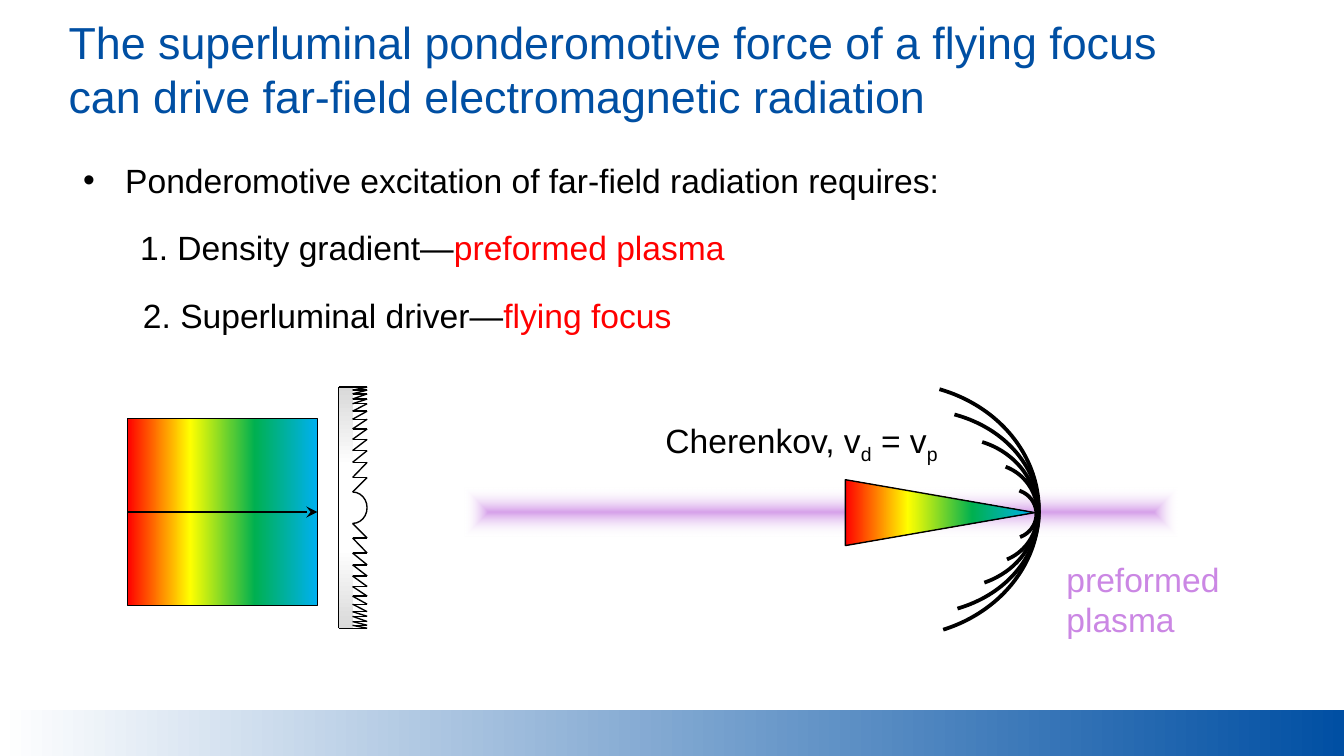
import pptx
import pptx.dml.color
import pptx.enum.shapes
import pptx.enum.text
import pptx.oxml
import pptx.oxml.ns
import pptx.util
from dataclasses import dataclass

Pt = pptx.util.Pt
SHAPE = pptx.enum.shapes.MSO_SHAPE
ANCHOR = pptx.enum.text.MSO_ANCHOR
NAMESPACE = pptx.oxml.ns.nsdecls("a")


@dataclass(frozen=True)
class Theme:
    font: str = "Arial"
    title_size: float = 24
    text_size: float = 18
    thin: float = 0.75
    thick: float = 2
    blue: str = "004FA3"
    black: str = "000000"
    white: str = "FFFFFF"
    gray: str = "D9D9D9"
    red: str = "FF0000"
    plasma: str = "CB87E4"


THEME = Theme()

# Text: each paragraph is a list of (text, color, baseline) runs; "\v" breaks a line
TITLE = [[("The superluminal ponderomotive force of a flying focus \v"
           "can drive far-field electromagnetic radiation", THEME.blue, 0)]]
REQUIREMENTS = [
    [("Ponderomotive excitation of far-field radiation requires:", THEME.black, 0)],
    [("1. Density gradient—", THEME.black, 0), ("preformed plasma", THEME.red, 0)],
    [("2. Superluminal driver—", THEME.black, 0), ("flying focus", THEME.red, 0)],
]
REQUIREMENT_FORMATS = [
    dict(bullet="•", margin=22.5, indent=-22.5),
    dict(margin=30.5, space_before=14.3),
    dict(margin=32, space_before=15),
]
CHERENKOV = [[("Cherenkov, v", THEME.black, 0), ("d", THEME.black, -25),
              (" = v", THEME.black, 0), ("p", THEME.black, -25)]]
PLASMA_LABEL = [[("preformed", THEME.plasma, 0)], [("plasma", THEME.plasma, 0)]]

# Gradient stops: (position in percent, color, opacity in percent)
RAINBOW = [(0, THEME.red, 100), (33, "FFFF00", 100), (67, "00B050", 100), (100, "00B0F0", 100)]
BAND = [(0, THEME.white, 100), (100, THEME.blue, 100)]
GLASS = [(0, THEME.gray, 100), (33, THEME.white, 100), (67, THEME.white, 100), (100, THEME.gray, 100)]
GLOW = [(0, THEME.plasma, 78), (100, THEME.white, 0)]

# Lens: tooth heights of the upper half; the lower half mirrors them
LENS_LEFT, TOOTH_LEFT, LENS_RIGHT = 181.4, 188.9, 196.7
TEETH = [207.4, 209, 211, 213.8, 216.3, 220.3, 224.6, 229.8, 235.4, 241.4, 247.7, 255.8, 263.6]
LENS_MIRROR = 544

# Wavefronts: left, top, width, height; angles in the preset's own units
WAVEFRONTS = [(527.8, 262.1, 27.4, 26.6), (503.3, 248.4, 52.6, 53.3), (468.7, 234.7, 87.1, 79.9),
              (427.7, 219.6, 128.9, 109.4), (402.5, 205.2, 154.1, 136.1)]
WAVEFRONT_ANGLES = (174.116, 40.848)
HALF_CIRCLE = (162, 53.994)


def rgb(color):
    return pptx.dml.color.RGBColor.from_string(color)


def write(shape, paragraphs, size=THEME.text_size, anchor=ANCHOR.TOP, left_inset=7.2, formats=None):
    frame = shape.text_frame
    frame.word_wrap = True
    frame.auto_size = pptx.enum.text.MSO_AUTO_SIZE.NONE
    frame.vertical_anchor = anchor
    frame.margin_left, frame.margin_right = Pt(left_inset), Pt(7.2)
    frame.margin_top = frame.margin_bottom = Pt(3.6)
    for index, runs in enumerate(paragraphs):
        paragraph = frame.paragraphs[0] if index == 0 else frame.add_paragraph()
        style = formats[index] if formats else {}
        properties = paragraph._p.get_or_add_pPr()
        properties.set("marL", str(Pt(style.get("margin", 0))))
        properties.set("indent", str(Pt(style.get("indent", 0))))
        bullet = f'buChar {NAMESPACE} char="{style["bullet"]}"' if "bullet" in style else f"buNone {NAMESPACE}"
        properties.append(pptx.oxml.parse_xml(f"<a:{bullet}/>"))
        paragraph.alignment = pptx.enum.text.PP_ALIGN.LEFT
        paragraph.space_before = Pt(style.get("space_before", 0))
        for text, color, baseline in runs:
            for part, line in enumerate(text.split("\v")):
                if part:
                    paragraph.add_line_break()
                run = paragraph.add_run()
                run.text = line
                run.font.name, run.font.size = THEME.font, Pt(size)
                run.font.color.rgb = rgb(color)
                if baseline:
                    run.font._element.set("baseline", str(baseline * 1000))


def place(shape, left, top, width, height):
    shape.left, shape.top, shape.width, shape.height = map(Pt, (left, top, width, height))


def fill_gradient(shape, stops, angle=0, from_center=False):
    stop_xml = "".join(
        f'<a:gs pos="{position * 1000}"><a:srgbClr val="{color}">'
        f'<a:alpha val="{opacity * 1000}"/></a:srgbClr></a:gs>'
        for position, color, opacity in stops)
    if from_center:
        direction = '<a:path path="shape"><a:fillToRect l="50000" t="50000" r="50000" b="50000"/></a:path>'
    else:
        direction = f'<a:lin ang="{angle * 60000}" scaled="0"/>'
    shape.fill.gradient()
    gradient = shape._element.spPr.find(pptx.oxml.ns.qn("a:gradFill"))
    gradient.getparent().replace(gradient, pptx.oxml.parse_xml(
        f'<a:gradFill {NAMESPACE} rotWithShape="0"><a:gsLst>{stop_xml}</a:gsLst>{direction}</a:gradFill>'))


def add_figure(shapes, preset, box, stops=None, line=None, angles=(), **gradient):
    shape = shapes.add_shape(preset, *map(Pt, box))
    shape.shadow.inherit = False
    for index, angle in enumerate(angles):
        shape.adjustments[index] = angle
    if stops:
        fill_gradient(shape, stops, **gradient)
    else:
        shape.fill.background()
    if line:
        shape.line.color.rgb, shape.line.width = rgb(THEME.black), Pt(line)
    else:
        shape.line.fill.background()
    return shape


def add_line(shapes, start, end, arrow=False):
    line = shapes.add_connector(pptx.enum.shapes.MSO_CONNECTOR.STRAIGHT, *map(Pt, (*start, *end)))
    line.line.color.rgb, line.line.width = rgb(THEME.black), Pt(THEME.thin)
    if arrow:
        line.line._get_or_add_ln().append(pptx.oxml.parse_xml(f'<a:tailEnd {NAMESPACE} type="stealth"/>'))
    line._element.spPr.append(pptx.oxml.parse_xml(f"<a:effectLst {NAMESPACE}/>"))


def add_lens(slide):
    shapes = slide.shapes.add_group_shape().shapes
    top, bottom = TEETH[0], LENS_MIRROR - TEETH[0]
    add_figure(shapes, SHAPE.RECTANGLE, (LENS_LEFT, top, TOOTH_LEFT - LENS_LEFT + 0.4, bottom - top),
               GLASS, angle=90)
    for heights in (TEETH, [LENS_MIRROR - height for height in TEETH]):
        for outer, inner in zip(heights, heights[1:]):
            add_line(shapes, (TOOTH_LEFT, outer), (LENS_RIGHT, outer))
            add_line(shapes, (LENS_RIGHT, outer), (TOOTH_LEFT, inner))
    add_figure(shapes, SHAPE.ARC, (LENS_LEFT, TEETH[-1], LENS_RIGHT - LENS_LEFT, LENS_MIRROR - 2 * TEETH[-1]),
               line=THEME.thin, angles=HALF_CIRCLE)
    for height in (top, bottom):
        add_line(shapes, (LENS_LEFT, height), (TOOTH_LEFT, height))
    add_line(shapes, (LENS_LEFT, top), (LENS_LEFT, bottom))


def main():
    presentation = pptx.Presentation()
    presentation.slide_width, presentation.slide_height = Pt(720), Pt(405)
    slide = presentation.slides.add_slide(presentation.slide_layouts[1])
    shapes = slide.shapes
    title, body = slide.placeholders

    add_figure(shapes, SHAPE.RECTANGLE, (0, 380.2, 720, 24.8), BAND)
    place(title, 36.7, 3.6, 648.7, 66.2)
    write(title, TITLE, size=THEME.title_size, anchor=ANCHOR.MIDDLE, left_inset=0)
    place(body, 37.4, 82.1, 474.5, 100)
    write(body, REQUIREMENTS, formats=REQUIREMENT_FORMATS)

    add_lens(slide)
    add_figure(shapes, SHAPE.RECTANGLE, (68.4, 224.3, 101.6, 100), RAINBOW, THEME.thin)
    add_line(shapes, (68.4, 274.3), (170, 274.3), arrow=True)
    add_figure(shapes, SHAPE.RECTANGLE, (249.1, 261.4, 381.6, 25.9), GLOW, from_center=True)
    pulse = add_figure(shapes, SHAPE.ISOSCELES_TRIANGLE, (486, 223.9, 35.3, 101.5), RAINBOW, THEME.thin)
    pulse.rotation = 90
    for box in WAVEFRONTS:
        add_figure(shapes, SHAPE.ARC, box, line=THEME.thick, angles=WAVEFRONT_ANGLES)

    for paragraphs, box in ((PLASMA_LABEL, (564.2, 295.9, 99.4, 51.1)),
                            (CHERENKOV, (349.4, 221.2, 180.7, 28.8))):
        write(shapes.add_textbox(*map(Pt, box)), paragraphs)

    presentation.save("out.pptx")


if __name__ == "__main__":
    main()
